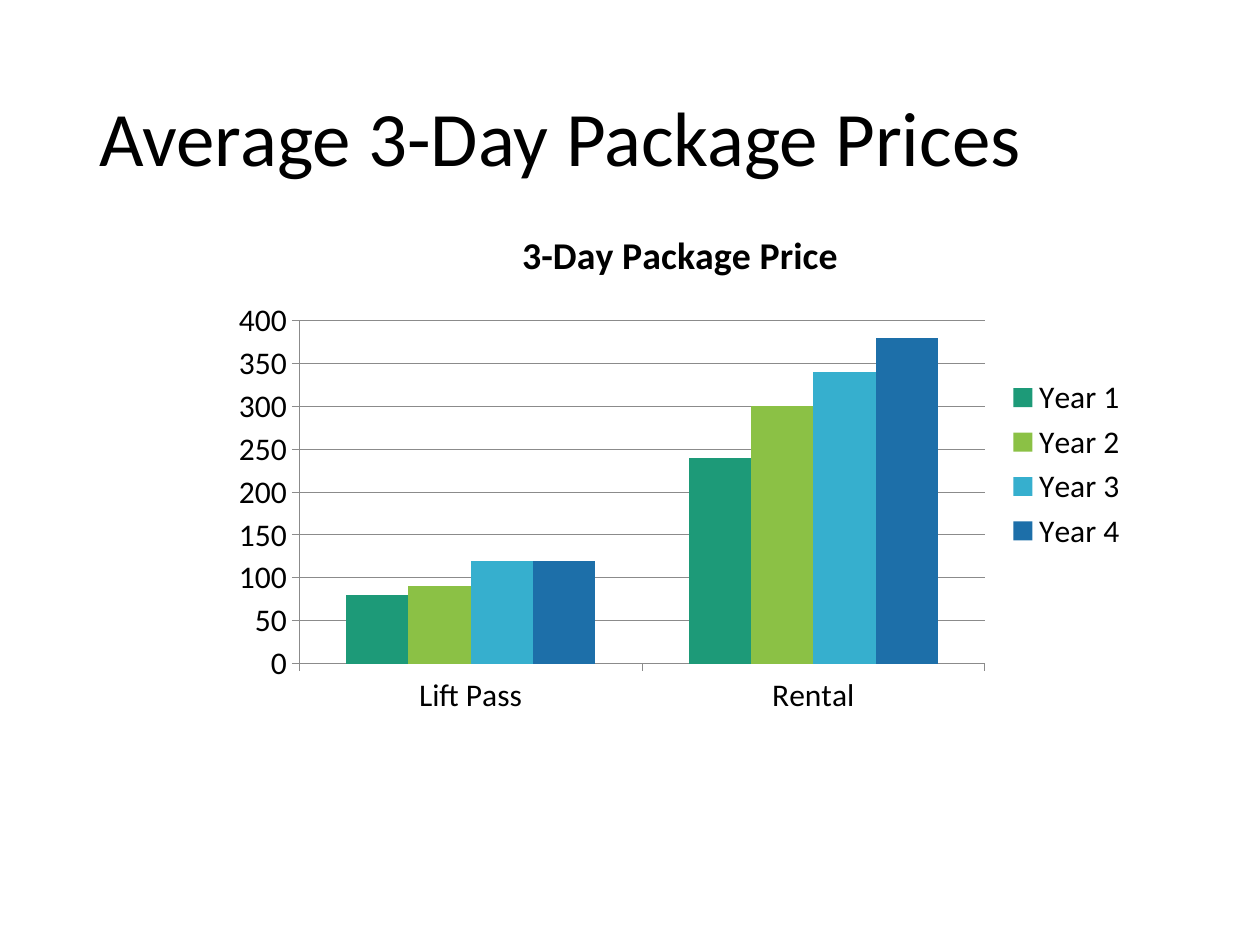
from pptx import Presentation
from pptx.chart.data import CategoryChartData
from pptx.dml.color import RGBColor
from pptx.enum import chart as ch, text
from pptx.util import Inches, Pt

# Content
TITLE = "Average 3-Day Package Prices"
CHART_TITLE = "3-Day Package Price"
CATEGORIES = ["Lift Pass", "Rental"]
BLACK = RGBColor(0x00, 0x00, 0x00)
GRAY = RGBColor(0x8B, 0x8B, 0x8B)
SERIES = [
    ("Year 1", (80, 240), RGBColor(0x1D, 0x9A, 0x78)),
    ("Year 2", (90, 300), RGBColor(0x8B, 0xC1, 0x45)),
    ("Year 3", (120, 340), RGBColor(0x36, 0xAF, 0xCE)),
    ("Year 4", (120, 380), RGBColor(0x1D, 0x6F, 0xA9)),
]
FONT = "Calibri"


def style_font(font, size, bold=False):
    font.name, font.size, font.bold = FONT, Pt(size), bold
    font.color.rgb = BLACK


def style_line(line):
    line.color.rgb = GRAY
    line.width = Pt(0.5)


prs = Presentation()
prs.slide_width, prs.slide_height = Inches(10), Inches(7.5)
s = prs.slides.add_slide(prs.slide_layouts[5])

# Title
sp = s.shapes.title
sp.left, sp.top, sp.width, sp.height = map(Inches, (0.69, 0.4, 8.62, 1.45))
tf = sp.text_frame
tf.vertical_anchor = text.MSO_ANCHOR.MIDDLE
p = tf.paragraphs[0]
p.alignment = text.PP_ALIGN.LEFT
p.line_spacing = 0.9
r = p.add_run()
r.text = TITLE
style_font(r.font, 44)

# Price chart
data = CategoryChartData()
data.categories = CATEGORIES
for name, values, _ in SERIES:
    data.add_series(name, values)
chart = s.shapes.add_chart(
    ch.XL_CHART_TYPE.COLUMN_CLUSTERED,
    *map(Inches, (1.75, 1.62, 7.3, 4.13)), data).chart
style_font(chart.font, 18)

# Chart title and legend
p = chart.chart_title.text_frame.paragraphs[0]
r = p.add_run()
r.text = CHART_TITLE
style_font(r.font, 21.6, True)
chart.chart_title.include_in_layout = False
chart.has_legend = True
chart.legend.position = ch.XL_LEGEND_POSITION.RIGHT
chart.legend.include_in_layout = False

# Bars
plot = chart.plots[0]
plot.gap_width, plot.overlap = 150, 0
plot.vary_by_categories = False
for bars, (_, _, color) in zip(plot.series, SERIES):
    bars.format.fill.solid()
    bars.format.fill.fore_color.rgb = color

# Axes
for axis in (chart.category_axis, chart.value_axis):
    axis.major_tick_mark = ch.XL_TICK_MARK.OUTSIDE
    axis.minor_tick_mark = ch.XL_TICK_MARK.NONE
    style_line(axis.format.line)
axis = chart.value_axis
axis.minimum_scale, axis.maximum_scale, axis.major_unit = 0, 400, 50
axis.has_major_gridlines = True
style_line(axis.major_gridlines.format.line)

prs.save("out.pptx")
